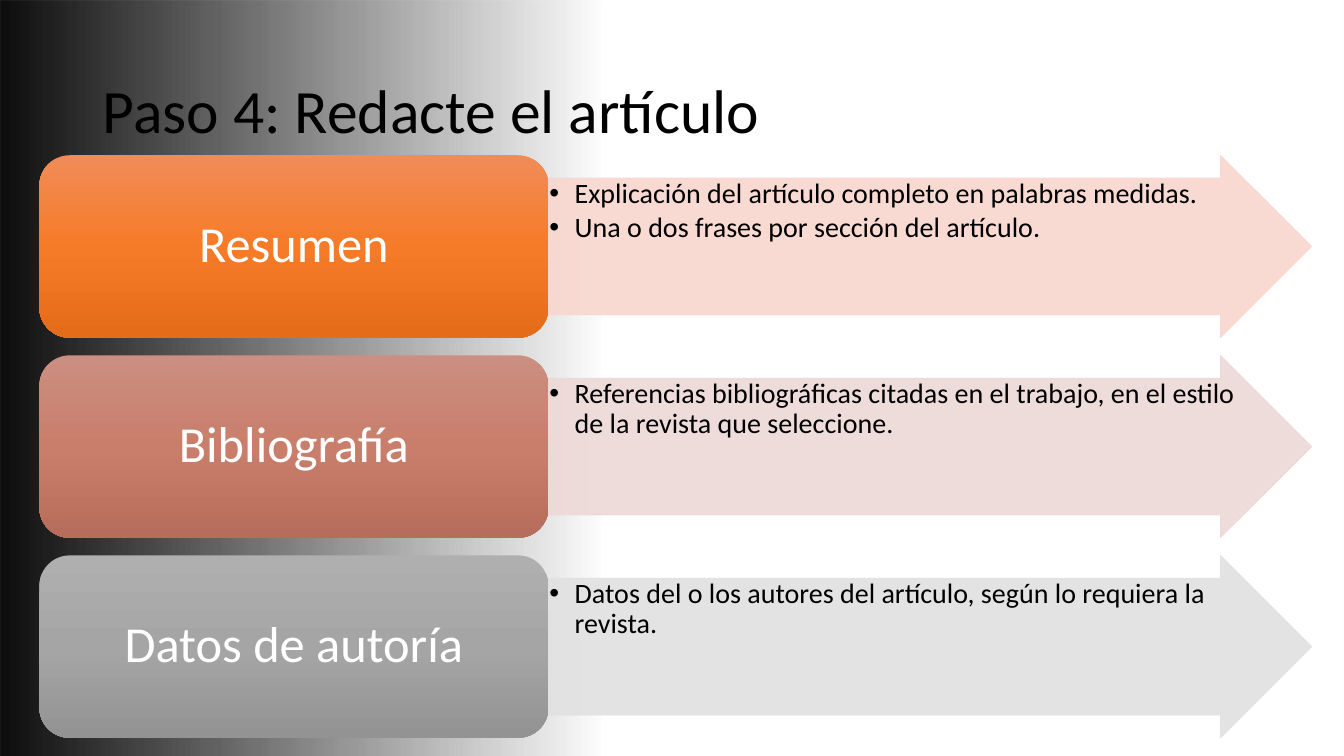
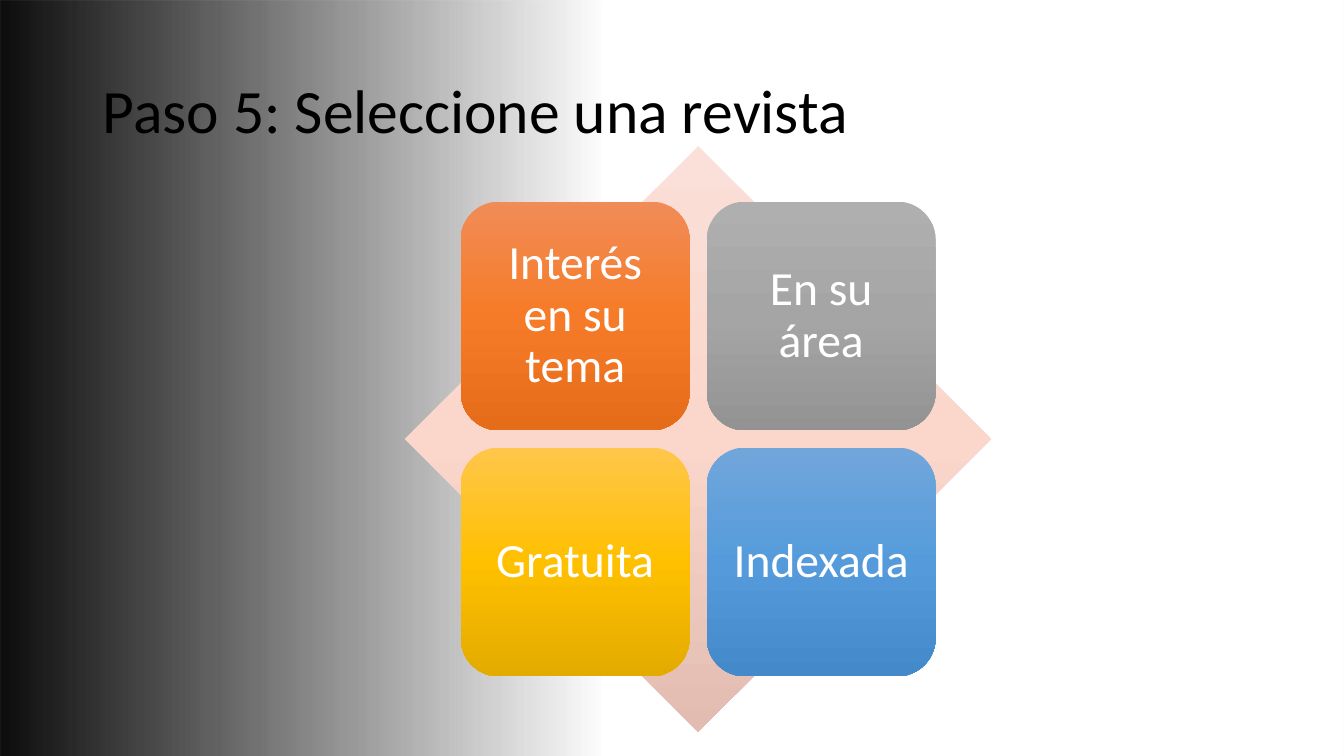
from lxml.etree import SubElement
from pptx import Presentation
from pptx.dml.color import RGBColor
from pptx.enum.shapes import MSO_SHAPE
from pptx.enum.text import MSO_ANCHOR, PP_ALIGN
from pptx.oxml.ns import qn
from pptx.util import Inches, Pt

SLIDE_WIDTH, SLIDE_HEIGHT = 13.33, 7.5
FONT = "Calibri"
BLACK, WHITE = "000000", "FFFFFF"
SHADE = "0D0D0D"

# Gradients run from top to bottom: (position in percent, colour, opacity in percent)
ORANGE = [(0, "F18C57", 100), (50, "F67B28", 100), (100, "E56C19", 100)]
TERRACOTTA = [(0, "CB8F81", 100), (50, "C97E6B", 100), (100, "B76D5B", 100)]
GRAY = [(0, "AFAFAF", 100), (50, "A5A5A5", 100), (100, "939393", 100)]
GOLD = [(0, "FFC64B", 100), (50, "FFC000", 100), (100, "E3AB00", 100)]
BLUE = [(0, "71A6DB", 100), (50, "559BDB", 100), (100, "448ACA", 100)]
PEACH = [(0, "FAE0D8", 100), (50, "FAD6CB", 100), (100, "E2BCB1", 100)]
SIDE_SHADE = [(0, SHADE, 100), (45, SHADE, 0)]

ARTICLE_PARTS = [
    ("Resumen", ORANGE, "F8D7CE",
     ["Explicación del artículo completo en palabras medidas.",
      "Una o dos frases por sección del artículo."]),
    ("Bibliografía", TERRACOTTA, "EDD9D7",
     ["Referencias bibliográficas citadas en el trabajo, en el estilo "
      "de la revista que seleccione."]),
    ("Datos de autoría", GRAY, "E1E1E1",
     ["Datos del o los autores del artículo, según lo requiera la revista."]),
]
JOURNAL_CRITERIA = [
    ("Interés en su tema", ORANGE),
    ("En su área", GRAY),
    ("Gratuita", GOLD),
    ("Indexada", BLUE),
]


def rgb(value):
    return RGBColor.from_string(value)


def add_plain_shape(slide, kind, left, top, width, height):
    shape = slide.shapes.add_shape(
        kind, Inches(left), Inches(top), Inches(width), Inches(height))
    shape.shadow.inherit = False
    shape.line.fill.background()
    return shape


def set_gradient(shape, stops, angle=270):
    """Fill with the stops; the angle is counter-clockwise, 270 running downwards."""
    shape.fill.gradient()
    shape.fill.gradient_angle = angle
    stop_list = shape.element.spPr.find(qn("a:gradFill")).find(qn("a:gsLst"))
    for old_stop in list(stop_list):
        stop_list.remove(old_stop)
    for position, color, opacity in stops:
        stop = SubElement(stop_list, qn("a:gs"), pos=str(position * 1000))
        color_element = SubElement(stop, qn("a:srgbClr"), val=color)
        if opacity < 100:
            SubElement(color_element, qn("a:alpha"), val=str(opacity * 1000))


def set_opacity(shape, percent):
    """Apply the opacity to the solid fill and the line colour."""
    for color_element in shape.element.spPr.iter(qn("a:srgbClr")):
        SubElement(color_element, qn("a:alpha"), val=str(percent * 1000))


def set_frame(shape, anchor, inset_x, inset_y):
    frame = shape.text_frame
    frame.word_wrap = True
    frame.vertical_anchor = anchor
    frame.margin_left = frame.margin_right = Inches(inset_x)
    frame.margin_top = frame.margin_bottom = Inches(inset_y)
    return frame


def write_paragraph(paragraph, text, size, color, alignment=PP_ALIGN.LEFT):
    paragraph.alignment = alignment
    paragraph.line_spacing = 0.9
    run = paragraph.add_run()
    run.text = text
    run.font.name = FONT
    run.font.size = Pt(size)
    run.font.color.rgb = rgb(color)


def add_bullet(paragraph, indent):
    properties = paragraph._p.get_or_add_pPr()
    properties.set("marL", str(Inches(indent)))
    properties.set("indent", str(-Inches(indent)))
    SubElement(properties, qn("a:buFont"), typeface="Arial")
    SubElement(properties, qn("a:buChar"), char="•")


def add_titled_slide(presentation, title):
    slide = presentation.slides.add_slide(presentation.slide_layouts[6])
    shade = add_plain_shape(
        slide, MSO_SHAPE.RECTANGLE, 0, 0, SLIDE_WIDTH, SLIDE_HEIGHT)
    set_gradient(shade, SIDE_SHADE, angle=0)
    box = slide.shapes.add_textbox(
        Inches(0.92), Inches(0.4), Inches(11.5), Inches(1.45))
    frame = set_frame(box, MSO_ANCHOR.MIDDLE, 0.1, 0.05)
    write_paragraph(frame.paragraphs[0], title, 44, BLACK)
    return slide


def add_label(slide, text, stops, size, position, insets):
    """Add a rounded gradient box with centred white text."""
    shape = add_plain_shape(slide, MSO_SHAPE.ROUNDED_RECTANGLE, *position)
    set_gradient(shape, stops)
    frame = set_frame(shape, MSO_ANCHOR.MIDDLE, *insets)
    write_paragraph(frame.paragraphs[0], text, size, WHITE, PP_ALIGN.CENTER)


def add_bullet_arrow(slide, texts, color, position):
    arrow = add_plain_shape(slide, MSO_SHAPE.RIGHT_ARROW, *position)
    arrow.adjustments[0] = 0.75
    arrow.adjustments[1] = 0.5
    arrow.fill.solid()
    arrow.fill.fore_color.rgb = rgb(color)
    arrow.line.color.rgb = rgb(color)
    arrow.line.width = Pt(0.5)
    set_opacity(arrow, 90)
    frame = set_frame(arrow, MSO_ANCHOR.TOP, 0.01, 0.01)
    for index, text in enumerate(texts):
        paragraph = frame.add_paragraph() if index else frame.paragraphs[0]
        write_paragraph(paragraph, text, 20, BLACK)
        paragraph.space_after = Pt(3)
        add_bullet(paragraph, 0.25)


def add_article_rows(slide):
    left, top, height, pitch = 0.39, 1.54, 1.81, 1.985
    label_width, arrow_width = 5.05, 7.57
    for index, (name, stops, arrow_color, texts) in enumerate(ARTICLE_PARTS):
        row_top = top + index * pitch
        add_bullet_arrow(slide, texts, arrow_color,
                         (left + label_width, row_top, arrow_width, height))
        add_label(slide, name, stops, 36,
                  (left, row_top, label_width, height), (0.15, 0.07))


def add_criteria_matrix(slide):
    diamond = add_plain_shape(slide, MSO_SHAPE.DIAMOND, 4.02, 1.45, 5.81, 5.81)
    set_gradient(diamond, PEACH)
    left, top, side, pitch = 4.57, 2, 2.27, 2.44
    for index, (name, stops) in enumerate(JOURNAL_CRITERIA):
        row, column = divmod(index, 2)
        position = (left + column * pitch, top + row * pitch, side, side)
        add_label(slide, name, stops, 34, position, (0.14, 0.14))


def main():
    presentation = Presentation()
    presentation.slide_width = Inches(SLIDE_WIDTH)
    presentation.slide_height = Inches(SLIDE_HEIGHT)
    add_article_rows(
        add_titled_slide(presentation, "Paso 4: Redacte el artículo"))
    add_criteria_matrix(
        add_titled_slide(presentation, "Paso 5: Seleccione una revista"))
    presentation.save("out.pptx")


if __name__ == "__main__":
    main()
